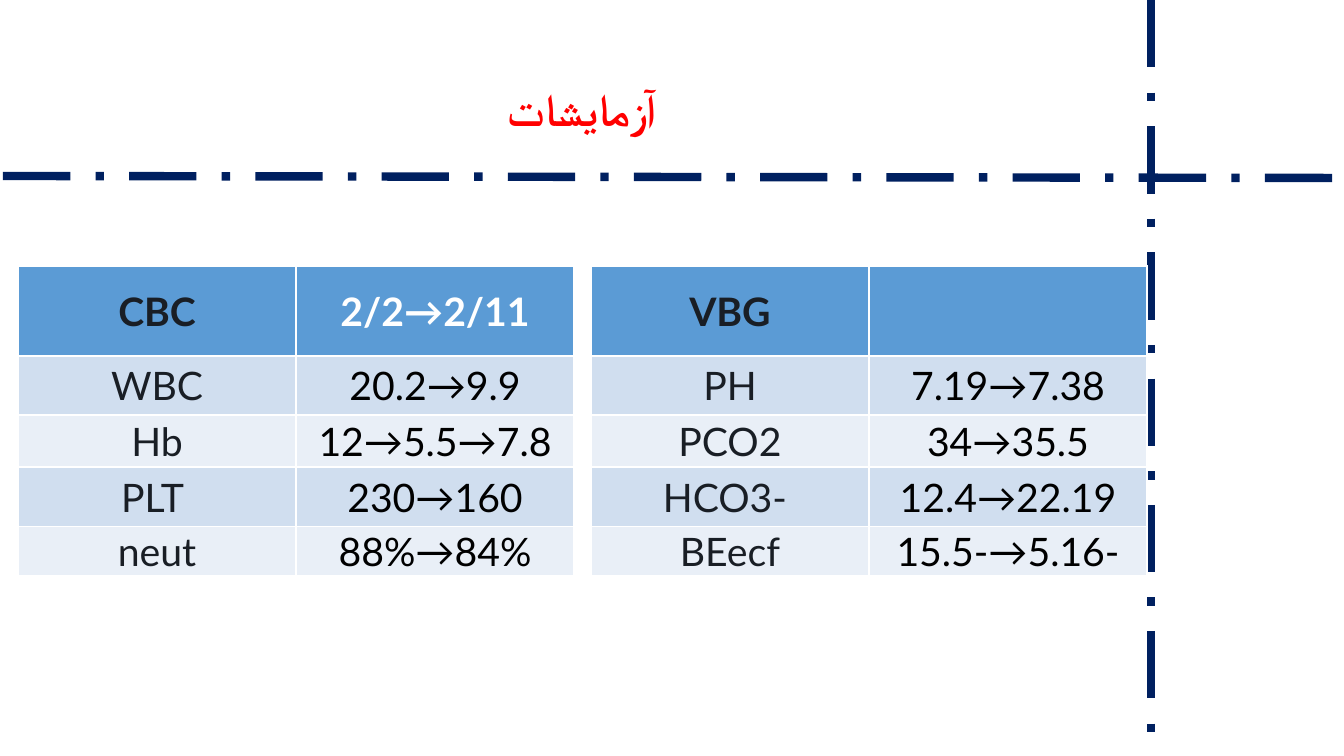
from lxml import etree
from pptx import Presentation
from pptx.dml.color import RGBColor
from pptx.enum.dml import MSO_LINE
from pptx.enum.shapes import MSO_CONNECTOR
from pptx.enum.text import MSO_ANCHOR, MSO_AUTO_SIZE, PP_ALIGN
from pptx.oxml.ns import qn
from pptx.util import Pt

EMU_PER_PX = 914400 / 100.8
STRAIGHT = MSO_CONNECTOR.STRAIGHT
LONG_DASH_DOT = MSO_LINE.LONG_DASH_DOT
CENTER = PP_ALIGN.CENTER
MIDDLE, BOTTOM = MSO_ANCHOR.MIDDLE, MSO_ANCHOR.BOTTOM
NO_FIT = MSO_AUTO_SIZE.NONE

SLIDE_WIDTH, SLIDE_HEIGHT = 1344, 756
NAVY, RED, WHITE, BLACK, INK = "002060", "FF0000", "FFFFFF", "000000", "191E25"
HEADER_FILL = "5B9BD5"
BAND_FILLS = ("D0DEEF", "E9EFF7")

ROW_HEIGHTS = (90, 59, 52, 60, 48)
COLUMN_WIDTH = 278
TABLE_TOP = 266
BLOOD_COUNT = (
    ("CBC", "2/2→2/11"),
    ("WBC", "20.2→9.9"),
    ("Hb", "12→5.5→7.8"),
    ("PLT ", "230→160"),
    ("neut", "88%→84%"),
)
BLOOD_GAS = (
    ("VBG", ""),
    ("PH", "7.19→7.38"),
    ("PCO2", "34→35.5"),
    ("HCO3- ", "12.4→22.19"),
    ("BEecf", "15.5-→5.16-"),
)


def px(length):
    return round(length * EMU_PER_PX)


def color(value):
    return RGBColor.from_string(value)


def style_paragraph(para, font_name, size, fill, bold):
    para.alignment = CENTER
    para.font.name = font_name
    para.font.size = Pt(size)
    para.font.bold = bold
    para.font.color.rgb = color(fill)


def add_rule(page, start, end):
    rule = page.shapes.add_connector(STRAIGHT, *map(px, start + end))
    rule.line.color.rgb = color(NAVY)
    rule.line.width = Pt(6)
    rule.line.dash_style = LONG_DASH_DOT
    etree.SubElement(rule._element.spPr, qn("a:effectLst"))


def fill_title(page, left, top, width, height):
    title = page.shapes.title
    title.left, title.top, title.width, title.height = map(
        px, (left, top, width, height))
    frame = title.text_frame
    frame.word_wrap = True
    frame.auto_size = NO_FIT
    frame.vertical_anchor = BOTTOM
    frame.margin_left = frame.margin_right = frame.margin_top = px(5)
    frame.margin_bottom = px(9)
    para = frame.paragraphs[0]
    para.text = "آزمایشات"
    style_paragraph(para, "Arial", 32.4, RED, True)
    properties = para._p.get_or_add_pPr()
    properties.set("rtl", "1")
    etree.SubElement(properties.find(qn("a:defRPr")), qn("a:cs"), typeface="Arial")


def fill_cell(cell, text, fill, ink, bold):
    cell.fill.solid()
    cell.fill.fore_color.rgb = color(fill)
    cell.vertical_anchor = MIDDLE
    cell.margin_left = cell.margin_right = px(1)
    cell.margin_top = cell.margin_bottom = px(1)
    if text:
        para = cell.text_frame.paragraphs[0]
        para.text = text
        style_paragraph(para, "Lato", 28, ink, bold)


def add_results(page, left, top, results):
    table = page.shapes.add_table(
        len(results), 2, px(left), px(top),
        px(2 * COLUMN_WIDTH), px(sum(ROW_HEIGHTS))).table
    for column in table.columns:
        column.width = px(COLUMN_WIDTH)
    for index, values in enumerate(results):
        table.rows[index].height = px(ROW_HEIGHTS[index])
        header = index == 0
        fill = HEADER_FILL if header else BAND_FILLS[(index - 1) % 2]
        inks = (INK, WHITE if header else BLACK)
        for cell, text, ink in zip(table.rows[index].cells, values, inks):
            fill_cell(cell, text, fill, ink, header)


def main():
    deck = Presentation()
    deck.slide_width, deck.slide_height = px(SLIDE_WIDTH), px(SLIDE_HEIGHT)
    page = deck.slides.add_slide(deck.slide_layouts[5])
    add_rule(page, (3, 176), (SLIDE_WIDTH, 178))
    add_rule(page, (1151, 0), (1151, SLIDE_HEIGHT))
    fill_title(page, 60, 39, 1043, 106)
    add_results(page, 18, TABLE_TOP, BLOOD_COUNT)
    add_results(page, 591, TABLE_TOP, BLOOD_GAS)
    deck.save("out.pptx")


if __name__ == "__main__":
    main()
